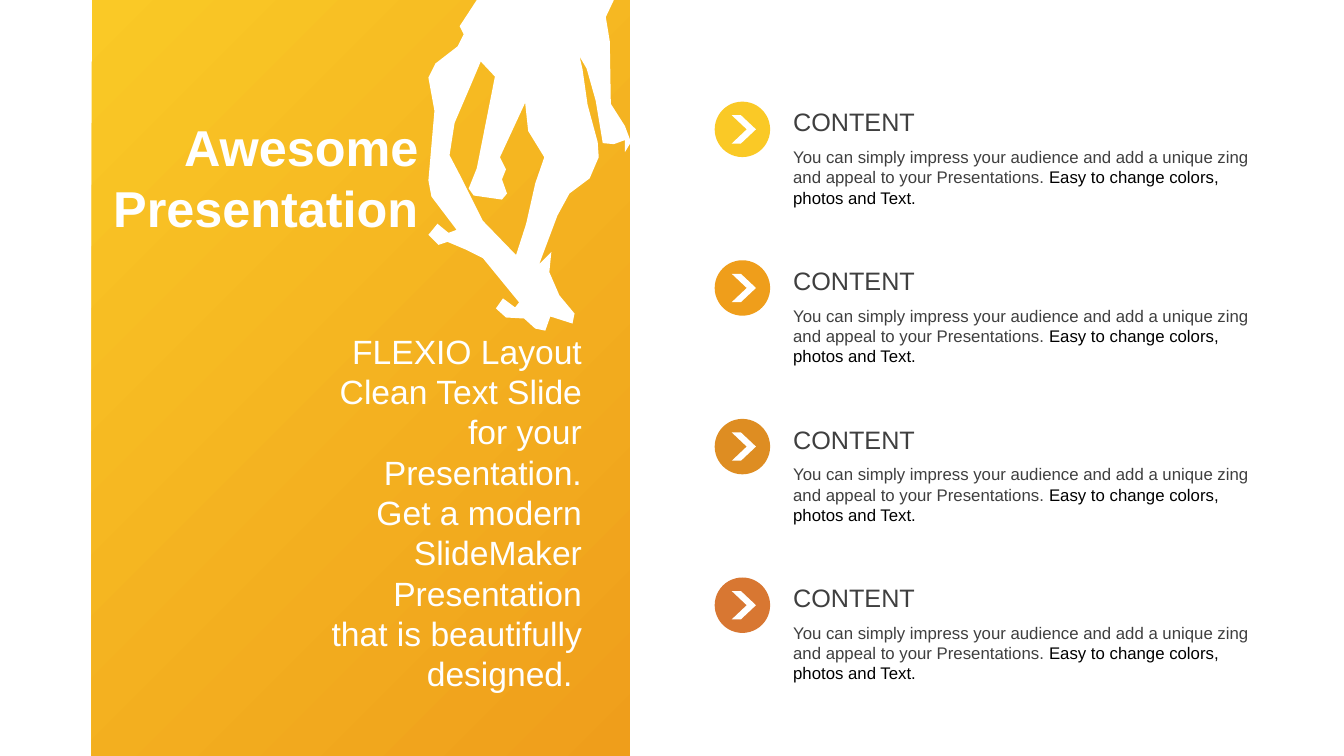
from pptx import Presentation
from pptx.dml.color import RGBColor
from pptx.enum.shapes import MSO_SHAPE as Preset
from pptx.enum.text import MSO_ANCHOR as Anchor, MSO_AUTO_SIZE as AutoSize, PP_ALIGN as Align
from pptx.util import Pt

WHITE = RGBColor(0xFF, 0xFF, 0xFF)
BLACK = RGBColor(0x00, 0x00, 0x00)
GRAY = RGBColor(0x3F, 0x3F, 0x3F)
YELLOW = RGBColor(0xFA, 0xC9, 0x26)
ORANGE = RGBColor(0xEF, 0x9E, 0x1B)
AMBER = RGBColor(0xDE, 0x8D, 0x22)
RUST = RGBColor(0xD8, 0x77, 0x32)

TITLE_FORMAT = {"size": Pt(36), "name": "Arial", "bold": True}
INTRO_FORMAT = {"size": Pt(24), "name": "Arial"}
HEADING_FORMAT = {"size": Pt(18), "name": "Arial"}
BODY_FORMAT = {"size": Pt(12), "name": "Arial"}

INTRO = ("FLEXIO Layout Clean Text Slide for your Presentation. "
         "Get a modern SlideMaker Presentation that is beautifully designed. ")
BODY = [("You can simply impress your audience and add a unique zing "
         "and appeal to your Presentations. ", GRAY),
        ("Easy to change colors, photos and Text.", BLACK)]

# Skater silhouette on a grid of 0.72 pt: body first, then the gap between the legs
GRID = 0.72
BODY_OUTLINE = [
    (73, 0), (209, 0), (201, 17), (205, 41), (206, 103), (220, 125), (226, 141),
    (220, 151), (220, 139), (209, 143), (198, 142), (191, 100), (182, 68), (175, 56),
    (178, 69), (183, 104), (193, 141), (194, 156), (185, 177), (165, 192), (153, 214),
    (135, 262), (147, 250), (145, 270), (155, 293), (170, 311), (168, 321), (146, 314),
    (141, 328), (131, 326), (120, 316), (102, 315), (92, 306), (99, 296), (111, 305),
    (115, 300), (79, 256), (63, 248), (44, 240), (35, 243), (25, 233), (34, 222),
    (45, 231), (53, 228), (28, 195), (25, 179), (31, 110), (25, 77), (32, 63),
    (54, 46), (60, 34), (56, 26),
]
LEG_GAP = [
    (77, 61), (66, 87), (51, 122), (46, 154), (57, 175), (79, 219), (112, 253),
    (122, 222), (131, 182), (140, 156), (124, 130), (121, 102), (96, 156), (102, 168),
    (98, 178), (103, 192), (98, 198), (70, 194), (65, 187), (73, 167), (91, 76),
]


def add_text(page, frame, paragraphs, settings, align=Align.LEFT, anchor=Anchor.MIDDLE):
    """Write paragraphs, each a list of (wording, colour) runs."""
    box = page.shapes.add_textbox(*map(Pt, frame))
    text_frame = box.text_frame
    for name, value in {"word_wrap": True, "auto_size": AutoSize.SHAPE_TO_FIT_TEXT,
                        "vertical_anchor": anchor}.items():
        setattr(text_frame, name, value)
    for index, runs in enumerate(paragraphs):
        para = text_frame.add_paragraph() if index else text_frame.paragraphs[0]
        para.alignment = align
        for wording, color in runs:
            span = para.add_run()
            span.text = wording
            for name, value in settings.items():
                setattr(span.font, name, value)
            span.font.color.rgb = color


def paint(shape, color):
    shape.shadow.inherit = False
    shape.line.fill.background()
    shape.fill.solid()
    shape.fill.fore_color.rgb = color


def add_skater(page, left, top):
    builder = page.shapes.build_freeform(*BODY_OUTLINE[0], scale=Pt(GRID))
    builder.add_line_segments(BODY_OUTLINE[1:], close=True)
    builder.move_to(*LEG_GAP[0])
    builder.add_line_segments(LEG_GAP[1:], close=True)
    paint(builder.convert_to_shape(Pt(left), Pt(top)), WHITE)


def add_title_panel(page, left, top, width, height):
    # Gradient ground
    panel = page.shapes.add_shape(Preset.RECTANGLE, *map(Pt, (left, top, width, height)))
    paint(panel, YELLOW)
    panel.fill.gradient()
    panel.fill.gradient_angle = 315
    for stop, color in zip(panel.fill.gradient_stops, (YELLOW, ORANGE)):
        stop.color.rgb = color
    # Title and introduction
    add_text(page, (left + 2.2, top + 79.2, 238.3, 94.3),
             [[("Awesome", WHITE)], [("Presentation", WHITE)]], TITLE_FORMAT, Align.RIGHT)
    add_text(page, (left + 163.5, top + 231.1, 193.7, 269.3),
             [[(INTRO, WHITE)]], INTRO_FORMAT, Align.RIGHT)
    add_skater(page, left + 222.5, top)


def add_content_item(page, left, top, width, color):
    # Round marker with its chevron
    marker = page.shapes.add_shape(Preset.OVAL, *map(Pt, (left, top, 39.6, 39.6)))
    paint(marker, color)
    chevron = page.shapes.add_shape(Preset.CHEVRON,
                                    *map(Pt, (left + 12.2, top + 9.7, 17.3, 20.2)))
    chevron.adjustments[0] = 0.62
    paint(chevron, WHITE)
    # Heading above its body
    text_left, text_width = left + 49, width - 49
    add_text(page, (text_left, top, text_width, 28.8), [[("CONTENT", GRAY)]], HEADING_FORMAT)
    add_text(page, (text_left, top + 28.8, text_width, 51.1), [BODY], BODY_FORMAT,
             anchor=Anchor.TOP)


def add_content_list(page, left, top, width, pitch):
    for row, color in enumerate((YELLOW, ORANGE, AMBER, RUST)):
        add_content_item(page, left, top + row * pitch, width, color)


def main():
    deck = Presentation()
    deck.slide_width, deck.slide_height = Pt(960), Pt(540)
    page = deck.slides.add_slide(deck.slide_layouts[6])
    add_title_panel(page, 65.5, 0, 384.5, 540)
    add_content_list(page, 510.5, 72.6, 391.7, 113.3)
    deck.save("out.pptx")


if __name__ == "__main__":
    main()
